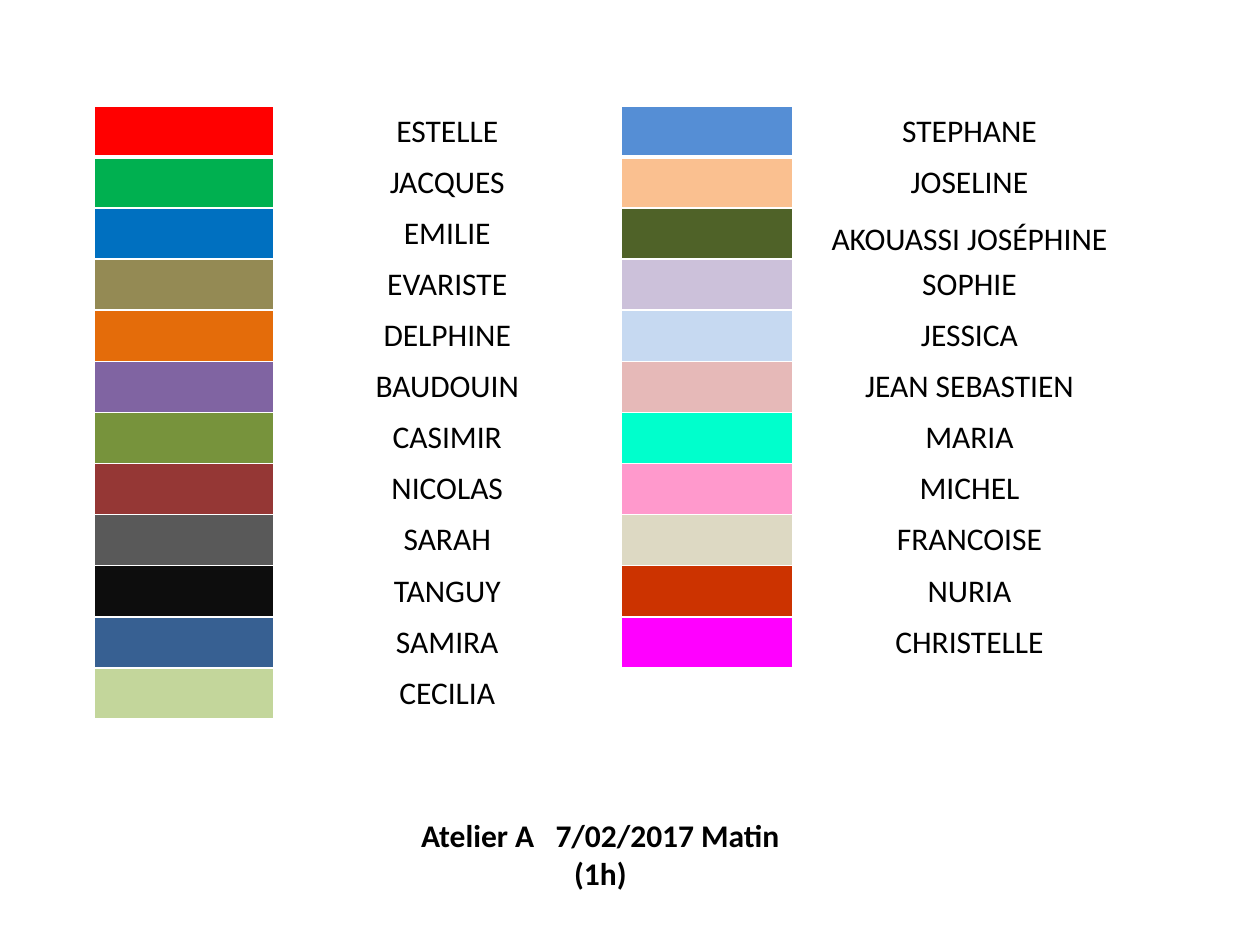
import pptx
import pptx.dml.color
import pptx.enum.text
import pptx.oxml
import pptx.oxml.ns
import pptx.util

Inches = pptx.util.Inches
Pt = pptx.util.Pt
CENTER = pptx.enum.text.PP_ALIGN.CENTER
ANCHOR = pptx.enum.text.MSO_ANCHOR

LEFT = [
    ("FF0000", "ESTELLE"), ("00B050", "JACQUES"), ("0070C0", "EMILIE"),
    ("948A54", "EVARISTE"), ("E46C0A", "DELPHINE"), ("8064A2", "BAUDOUIN"),
    ("77933C", "CASIMIR"), ("953735", "NICOLAS"), ("595959", "SARAH"),
    ("0D0D0D", "TANGUY"), ("376092", "SAMIRA"), ("C3D69B", "CECILIA"),
]
RIGHT = [
    ("558ED5", "STEPHANE"), ("FAC090", "JOSELINE"),
    ("4F6228", "AKOUASSI JOSÉPHINE"), ("CCC1DA", "SOPHIE"),
    ("C6D9F1", "JESSICA"), ("E6B9B8", "JEAN SEBASTIEN"),
    ("00FFCC", "MARIA"), ("FF99CC", "MICHEL"), ("DDD9C3", "FRANCOISE"),
    ("CC3300", "NURIA"), ("FF00FF", "CHRISTELLE"), ("FFFFFF", ""),
]
WIDTHS = [1.42, 2.76, 1.36, 2.81]


def color(code):
    return pptx.dml.color.RGBColor.from_string(code)


class Page:
    font = "Calibri"
    size = 18
    ink = "000000"
    paper = "FFFFFF"

    def __init__(self, slide):
        self.slide = slide

    def label(self, frame, words, bold=False):
        para = frame.paragraphs[0]
        para.alignment = CENTER
        run = para.add_run()
        run.text = words
        run.font.name = self.font
        run.font.size = Pt(self.size)
        run.font.bold = bold
        run.font.color.rgb = color(self.ink)

    def edge(self, cell, top, bottom):
        """Rule all four sides of a cell; top and bottom are in points."""
        props = cell._tc.get_or_add_tcPr()
        sides = [("L", 1), ("R", 1), ("T", top), ("B", bottom)]
        for place, (side, width) in enumerate(sides):
            line = pptx.oxml.parse_xml(
                f'<a:ln{side} {pptx.oxml.ns.nsdecls("a")} w="{Pt(width)}">'
                f'<a:solidFill><a:srgbClr val="{self.paper}"/></a:solidFill>'
                f'</a:ln{side}>')
            props.insert(place, line)

    def cell(self, cell, fill, words=""):
        cell.fill.solid()
        cell.fill.fore_color.rgb = color(fill)
        if words:
            self.label(cell.text_frame, words)

    def legend(self, x, y, height, widths, rows):
        """Table of colour and name pairs; returns the table."""
        frame = self.slide.shapes.add_table(
            len(rows), len(widths), Inches(x), Inches(y),
            Inches(sum(widths)), Inches(height))
        table = frame.table
        table.first_row = table.horz_banding = False
        for col, width in zip(table.columns, widths):
            col.width = Inches(width)
        for r, pairs in enumerate(rows):
            for c, (fill, name) in enumerate(pairs):
                self.cell(table.cell(r, 2 * c), fill)
                self.cell(table.cell(r, 2 * c + 1), self.paper, name)
            for cell in table.rows[r].cells:
                self.edge(cell, 3 if r == 1 else 1, 3 if r == 0 else 1)
        return table

    def text(self, x, y, width, height, words):
        box = self.slide.shapes.add_textbox(
            Inches(x), Inches(y), Inches(width), Inches(height))
        frame = box.text_frame
        frame.word_wrap = True
        frame.auto_size = pptx.enum.text.MSO_AUTO_SIZE.SHAPE_TO_FIT_TEXT
        self.label(frame, words, bold=True)


def main():
    deck = pptx.Presentation()
    deck.slide_width = Inches(10)
    deck.slide_height = Inches(7.5)
    page = Page(deck.slides.add_slide(deck.slide_layouts[6]))

    table = page.legend(0.75, 0.84, 4.86, WIDTHS, list(zip(LEFT, RIGHT)))
    long = table.cell(2, 3)
    long.vertical_anchor = ANCHOR.BOTTOM
    long.margin_left = long.margin_right = long.margin_top = Inches(0.01)
    long.margin_bottom = 0

    page.text(3.19, 6.43, 3.15, 0.71, "Atelier A   7/02/2017 Matin (1h)")
    deck.save("out.pptx")


if __name__ == "__main__":
    main()
